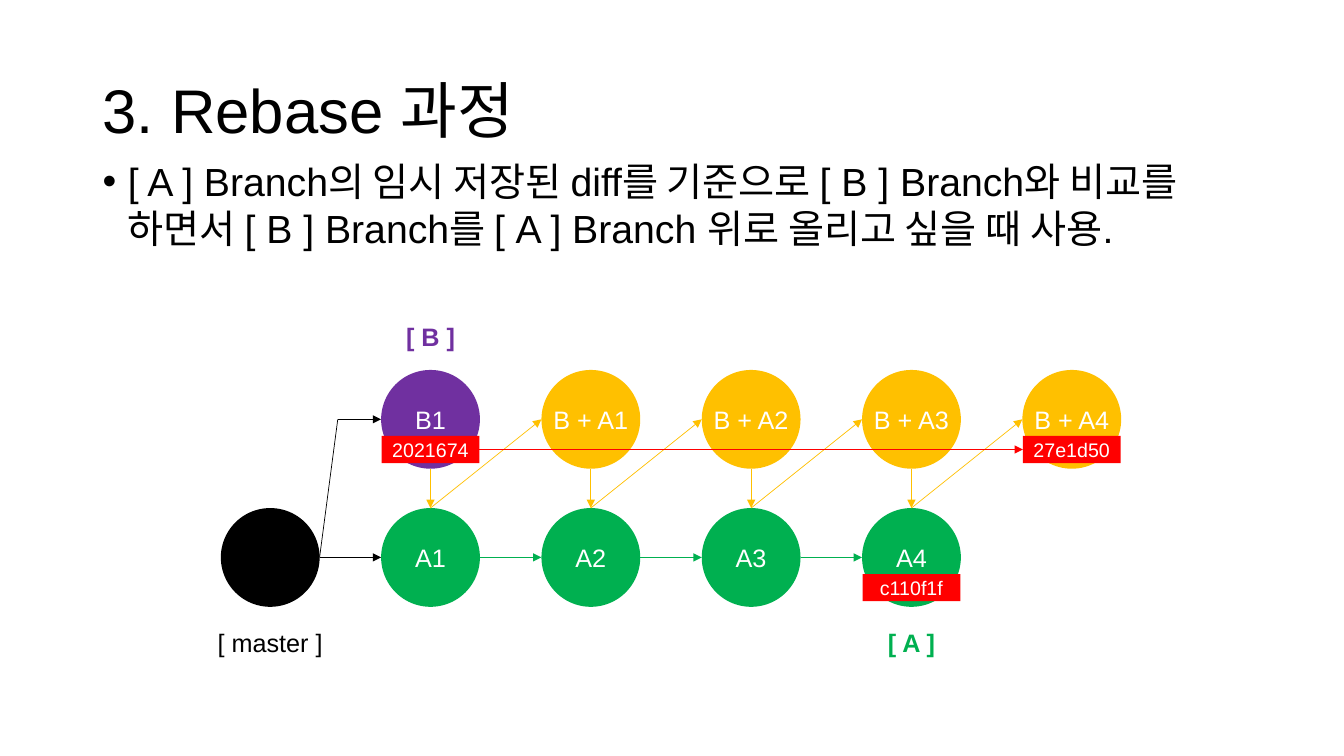
import dataclasses
import typing

import lxml.etree
import pptx
import pptx.dml.color
import pptx.enum.shapes
import pptx.enum.text
import pptx.oxml.ns
import pptx.util

BLACK = pptx.dml.color.RGBColor(0x00, 0x00, 0x00)
WHITE = pptx.dml.color.RGBColor(0xFF, 0xFF, 0xFF)
GREEN = pptx.dml.color.RGBColor(0x00, 0xB0, 0x50)
PURPLE = pptx.dml.color.RGBColor(0x70, 0x30, 0xA0)
AMBER = pptx.dml.color.RGBColor(0xFF, 0xC0, 0x00)
RED = pptx.dml.color.RGBColor(0xFF, 0x00, 0x00)

# Commit grid in inches: centre of column 0 / row 0, then the pitches
ORIGIN_X, ORIGIN_Y = 2.68, 4.16
COLUMN, ROW = 1.59, 1.37
DIAMETER = 0.98
RADIUS = DIAMETER / 2
TAG_WIDTH, TAG_HEIGHT, TAG_DROP = 0.97, 0.27, 0.3
B_ROW, A_ROW = 0, 1

Point = tuple[float, float]
Color = pptx.dml.color.RGBColor
OVAL = pptx.enum.shapes.MSO_SHAPE.OVAL
RECTANGLE = pptx.enum.shapes.MSO_SHAPE.RECTANGLE
CENTER = pptx.enum.text.PP_ALIGN.CENTER
MIDDLE = pptx.enum.text.MSO_ANCHOR.MIDDLE


@dataclasses.dataclass
class Commit:
    column: int
    row: int
    color: Color
    text: str = ""


@dataclasses.dataclass
class Tag:
    column: int
    row: int
    text: str


@dataclasses.dataclass
class BranchLabel:
    column: int
    top: float
    width: float
    text: str
    color: Color
    bold: bool


@dataclasses.dataclass
class Line:
    start: Point
    end: Point
    color: Color
    arrow: bool = True


def center(column: int, row: int, dx: float = 0, dy: float = 0) -> Point:
    return ORIGIN_X + column * COLUMN + dx, ORIGIN_Y + row * ROW + dy


def set_values(target: typing.Any, values: dict[str, typing.Any]) -> None:
    for name, value in values.items():
        setattr(target, name, value)


def write(shape: typing.Any, text: str, size: float, color: Color, bold: bool = False,
          frame: typing.Optional[dict] = None,
          layout: typing.Optional[dict] = None) -> typing.Any:
    set_values(shape.text_frame, frame or {})
    paragraph = shape.text_frame.paragraphs[0]
    set_values(paragraph, layout or {})
    run = paragraph.add_run()
    run.text = text
    set_values(run.font, {"name": "Arial", "size": pptx.util.Pt(size), "bold": bold})
    run.font.color.rgb = color
    return paragraph


def add_box(slide: typing.Any, left: float, top: float, width: float, height: float) -> typing.Any:
    return slide.shapes.add_textbox(*map(pptx.util.Inches, (left, top, width, height)))


def add_filled(slide: typing.Any, kind: typing.Any, middle: Point, width: float, height: float,
               fill: Color, text: str, size: float) -> None:
    box = (middle[0] - width / 2, middle[1] - height / 2, width, height)
    shape = slide.shapes.add_shape(kind, *map(pptx.util.Inches, box))
    shape.shadow.inherit = False
    shape.fill.solid()
    shape.fill.fore_color.rgb = fill
    shape.line.fill.background()
    if text:
        write(shape, text, size, WHITE,
              frame={"word_wrap": False, "vertical_anchor": MIDDLE},
              layout={"alignment": CENTER})


def add_label(slide: typing.Any, label: BranchLabel) -> None:
    left = center(label.column, B_ROW)[0] - label.width / 2
    write(add_box(slide, left, label.top, label.width, 0.4), label.text, 18, label.color,
          label.bold,
          frame={"word_wrap": False,
                 "auto_size": pptx.enum.text.MSO_AUTO_SIZE.SHAPE_TO_FIT_TEXT},
          layout={"alignment": CENTER})


def add_line(slide: typing.Any, line: Line) -> None:
    connector = slide.shapes.add_connector(
        pptx.enum.shapes.MSO_CONNECTOR.STRAIGHT,
        *map(pptx.util.Inches, line.start + line.end))
    connector.line.width = pptx.util.Pt(0.5)
    connector.line.color.rgb = line.color
    properties = connector.line._get_or_add_ln()
    if line.arrow:
        lxml.etree.SubElement(properties, pptx.oxml.ns.qn("a:tailEnd"), type="triangle")
    lxml.etree.SubElement(properties.getparent(), pptx.oxml.ns.qn("a:effectLst"))


def add_heading(slide: typing.Any) -> None:
    write(add_box(slide, 0.92, 0.4, 11.5, 1.45), "3. Rebase 과정", 44, BLACK,
          frame={"word_wrap": True, "vertical_anchor": MIDDLE},
          layout={"line_spacing": 0.9})
    paragraph = write(
        add_box(slide, 0.92, 1.51, 11.5, 1.67),
        "[ A ] Branch의 임시 저장된 diff를 기준으로 [ B ] Branch와 비교를 하면서 "
        "[ B ] Branch를 [ A ] Branch 위로 올리고 싶을 때 사용.", 28, BLACK,
        frame={"word_wrap": True}, layout={"space_before": pptx.util.Pt(10)})
    properties = paragraph._p.get_or_add_pPr()
    indent = pptx.util.Inches(0.25)
    properties.set("marL", str(indent))
    properties.set("indent", str(-indent))
    lxml.etree.SubElement(properties, pptx.oxml.ns.qn("a:buFont"), typeface="Arial")
    lxml.etree.SubElement(properties, pptx.oxml.ns.qn("a:buChar"), char="•")


def history_lines() -> list[Line]:
    # Fork from master to both branches
    fork = center(0, A_ROW, RADIUS)
    bend = center(0, B_ROW, RADIUS + 0.18)
    lines = [Line(fork, bend, BLACK, arrow=False),
             Line(bend, center(1, B_ROW, -RADIUS), BLACK)]
    for column in range(4):
        lines.append(Line(center(column, A_ROW, RADIUS), center(column + 1, A_ROW, -RADIUS),
                          GREEN if column else BLACK))
    # Each B commit is compared with the A commit below, then moves right
    for column in range(1, 5):
        top = center(column, A_ROW, 0, -RADIUS)
        lines.append(Line(center(column, B_ROW, 0, RADIUS), top, AMBER))
        lines.append(Line(top, center(column + 1, B_ROW, -RADIUS), AMBER))
    return lines


def main() -> None:
    presentation = pptx.Presentation()
    set_values(presentation, {"slide_width": pptx.util.Inches(13.33),
                              "slide_height": pptx.util.Inches(7.5)})
    slide = presentation.slides.add_slide(presentation.slide_layouts[6])
    add_heading(slide)

    # Commits
    commits = [Commit(0, A_ROW, BLACK), Commit(1, B_ROW, PURPLE, "B1")]
    for number in range(1, 5):
        commits.append(Commit(number, A_ROW, GREEN, f"A{number}"))
        commits.append(Commit(number + 1, B_ROW, AMBER, f"B + A{number}"))
    for commit in commits:
        add_filled(slide, OVAL, center(commit.column, commit.row), DIAMETER, DIAMETER,
                   commit.color, commit.text, 18)
    for line in history_lines():
        add_line(slide, line)

    # Branch names
    for label in (BranchLabel(0, 6.17, 1.66, "[ master ]", BLACK, False),
                  BranchLabel(4, 6.17, 0.68, "[ A ]", GREEN, True),
                  BranchLabel(1, 3.14, 0.69, "[ B ]", PURPLE, True)):
        add_label(slide, label)

    # Commit hashes and the overall move of B
    for tag in (Tag(5, B_ROW, "27e1d50"), Tag(1, B_ROW, "2021674"), Tag(4, A_ROW, "c110f1f")):
        add_filled(slide, RECTANGLE, center(tag.column, tag.row, 0, TAG_DROP),
                   TAG_WIDTH, TAG_HEIGHT, RED, tag.text, 14)
    add_line(slide, Line(center(1, B_ROW, TAG_WIDTH / 2, TAG_DROP),
                         center(5, B_ROW, -TAG_WIDTH / 2, TAG_DROP), RED))

    presentation.save("out.pptx")


if __name__ == "__main__":
    main()
